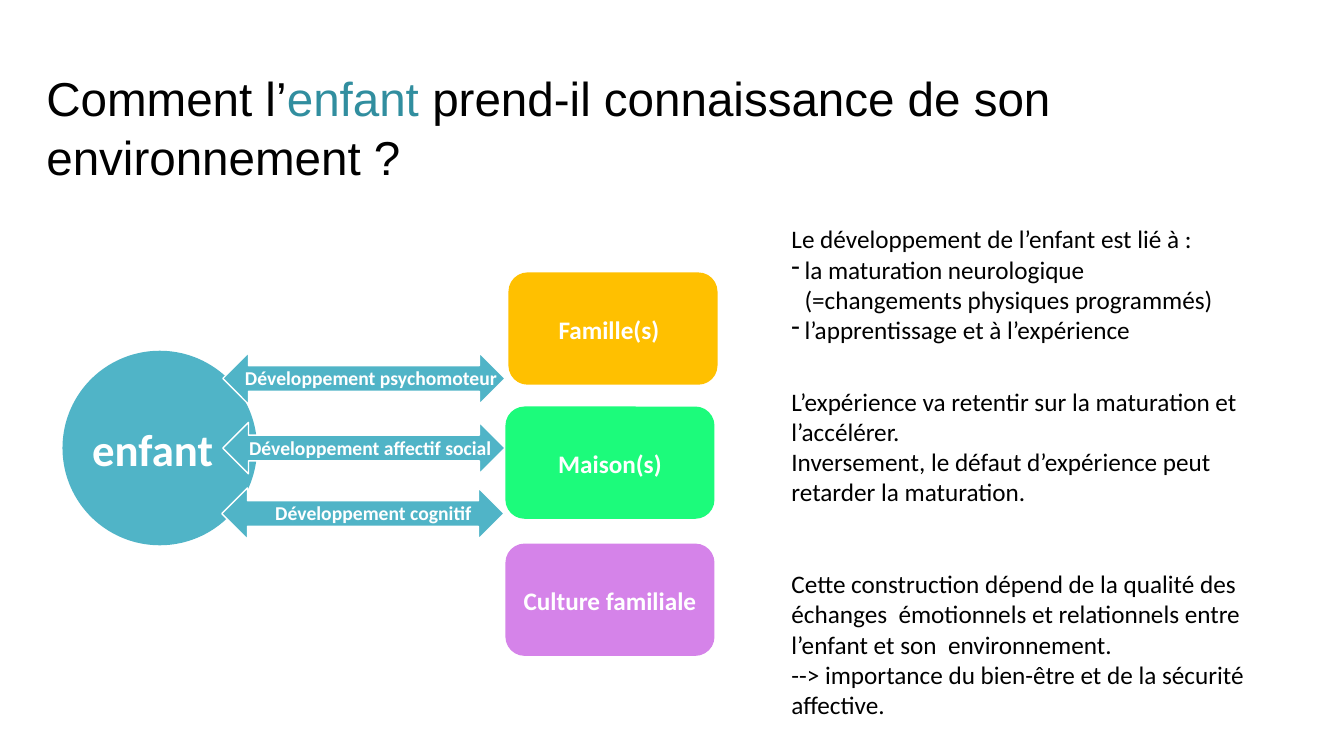
from dataclasses import dataclass
from lxml import etree
from pptx import Presentation
from pptx.dml.color import RGBColor
from pptx.enum.shapes import MSO_SHAPE as Preset
from pptx.enum.text import MSO_ANCHOR as Anchor, PP_ALIGN as Align
from pptx.oxml.ns import qn
from pptx.util import Inches, Pt


@dataclass(frozen=True)
class Theme:
    heading_font: str = "Arial"
    body_font: str = "Calibri"
    black: str = "000000"
    white: str = "FFFFFF"
    accent: str = "318E9F"
    child: str = "50B4C7"
    family: str = "FFC000"
    home: str = "1CFB7B"
    culture: str = "D583E9"
    title_size: int = 34
    child_size: int = 32
    body_size: int = 18
    label_size: int = 14


THEME = Theme()


def add_bullet(paragraph, marker, indent):
    properties = paragraph._p.get_or_add_pPr()
    properties.set("marL", str(Inches(indent)))
    properties.set("indent", str(-Inches(indent)))
    etree.SubElement(properties, qn("a:buChar")).set("char", marker)


def write_text(shape, paragraphs, *, size=THEME.body_size, font=THEME.body_font,
               color=THEME.black, bold=False, align=Align.LEFT, anchor=Anchor.TOP,
               wrap=True, right_inset=0, line_spacing=None):
    frame = shape.text_frame
    frame.word_wrap = wrap
    frame.vertical_anchor = anchor
    frame.margin_left = frame.margin_bottom = 0
    frame.margin_top = Inches(0.01)
    frame.margin_right = Inches(right_inset)
    for index, content in enumerate(paragraphs):
        paragraph = frame.add_paragraph() if index else frame.paragraphs[0]
        paragraph.alignment = align
        if line_spacing:
            paragraph.line_spacing = line_spacing
        runs = [(content, color)] if isinstance(content, str) else content
        if isinstance(content, str) and content.startswith("- "):
            add_bullet(paragraph, "-", 0.13)
            runs = [(content[2:], color)]
        for text, run_color in runs:
            for line_index, line in enumerate(text.split("\n")):
                if line_index:
                    paragraph.add_line_break()
                run = paragraph.add_run()
                run.text = line
                run.font.name = font
                run.font.size = Pt(size)
                run.font.bold = bold
                run.font.color.rgb = RGBColor.from_string(run_color)


def add_text(slide, box, paragraphs, **text_format):
    shape = slide.shapes.add_textbox(*map(Inches, box))
    write_text(shape, paragraphs, **text_format)


def add_preset(slide, preset, box, fill, line=None):
    shape = slide.shapes.add_shape(preset, *map(Inches, box))
    shape.shadow.inherit = False
    shape.fill.solid()
    shape.fill.fore_color.rgb = RGBColor.from_string(fill)
    if line:
        shape.line.color.rgb = RGBColor.from_string(line)
        shape.line.width = Pt(1)
    else:
        shape.line.fill.background()
    return shape


def draw_title(slide, box):
    add_text(slide, box, [[("Comment l’", THEME.black), ("enfant ", THEME.accent),
                           ("prend-il connaissance de son environnement ?", THEME.black)]],
             size=THEME.title_size, font=THEME.heading_font, line_spacing=1.04)


def draw_child(slide, box):
    circle = add_preset(slide, Preset.OVAL, box, THEME.child)
    write_text(circle, ["enfant"], size=THEME.child_size, color=THEME.white, bold=True,
               align=Align.CENTER, anchor=Anchor.MIDDLE, wrap=False, right_inset=0.14)


def draw_developments(slide, box):
    left, top, width, height = box
    arrow_height = 0.51
    developments = [
        ("Développement psychomoteur", 0, 0, 0.22),
        ("Développement affectif social", 0, 0.69, 0.26),
        ("Développement cognitif", -0.01, 1.34, 0.52),
    ]
    for label, shift, drop, label_shift in developments:
        arrow_box = (left + shift, top + drop, width, arrow_height)
        add_preset(slide, Preset.LEFT_RIGHT_ARROW, arrow_box, THEME.child, THEME.white)
        add_text(slide, (left + label_shift, top + drop + 0.12, width - label_shift, 0.25),
                 [label], size=THEME.label_size, color=THEME.white, bold=True, wrap=False)


def draw_environment(slide, box):
    left, top, width, height = box
    card_height = 1.1
    cards = [
        ("Famille(s)", THEME.family, 0.03, 0, 0.08),
        ("Maison(s)", THEME.home, 0, 1.33, 0),
        ("Culture familiale", THEME.culture, 0, 2.69, 0),
    ]
    for label, fill, shift, drop, right_inset in cards:
        card_box = (left + shift, top + drop, width, card_height)
        card = add_preset(slide, Preset.ROUNDED_RECTANGLE, card_box, fill, fill)
        write_text(card, [label], color=THEME.white, bold=True, align=Align.CENTER,
                   anchor=Anchor.MIDDLE, right_inset=right_inset)


def draw_explanations(slide, box):
    left, top, width, height = box
    explanations = [
        (0, 1.23, ["Le développement de l’enfant est lié à :",
                   "- la maturation neurologique\n(=changements physiques programmés)",
                   "- l’apprentissage et à l’expérience"]),
        (1.61, 1.23, ["L’expérience va retentir sur la maturation et l’accélérer.",
                      "Inversement, le défaut d’expérience peut retarder la maturation."]),
        (3.42, 1.53, ["Cette construction dépend de la qualité des échanges  émotionnels "
                      "et relationnels entre l’enfant et son  environnement.",
                      "--> importance du bien-être et de la sécurité affective."]),
    ]
    for drop, block_height, paragraphs in explanations:
        add_text(slide, (left, top + drop, width, block_height), paragraphs)


def main():
    presentation = Presentation()
    presentation.slide_width = Inches(13.33)
    presentation.slide_height = Inches(7.5)
    slide = presentation.slides.add_slide(presentation.slide_layouts[6])
    draw_title(slide, (0.46, 0.65, 12.41, 1.16))
    draw_child(slide, (0.62, 3.48, 1.93, 1.93))
    draw_developments(slide, (2.21, 3.5, 2.8, 1.85))
    draw_environment(slide, (5.02, 2.71, 2.06, 3.79))
    draw_explanations(slide, (7.85, 2.21, 5.03, 4.95))
    presentation.save("out.pptx")


if __name__ == "__main__":
    main()
